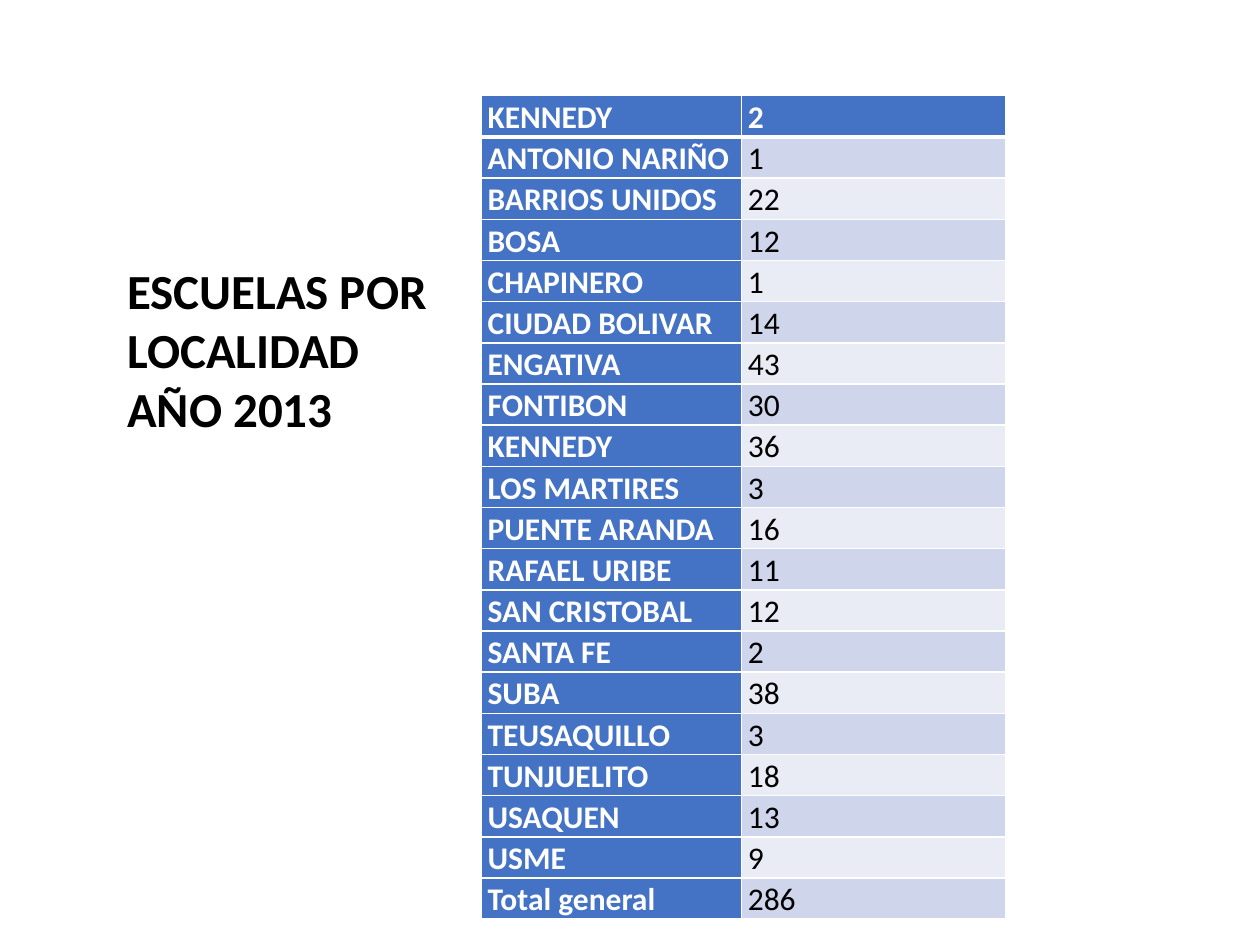
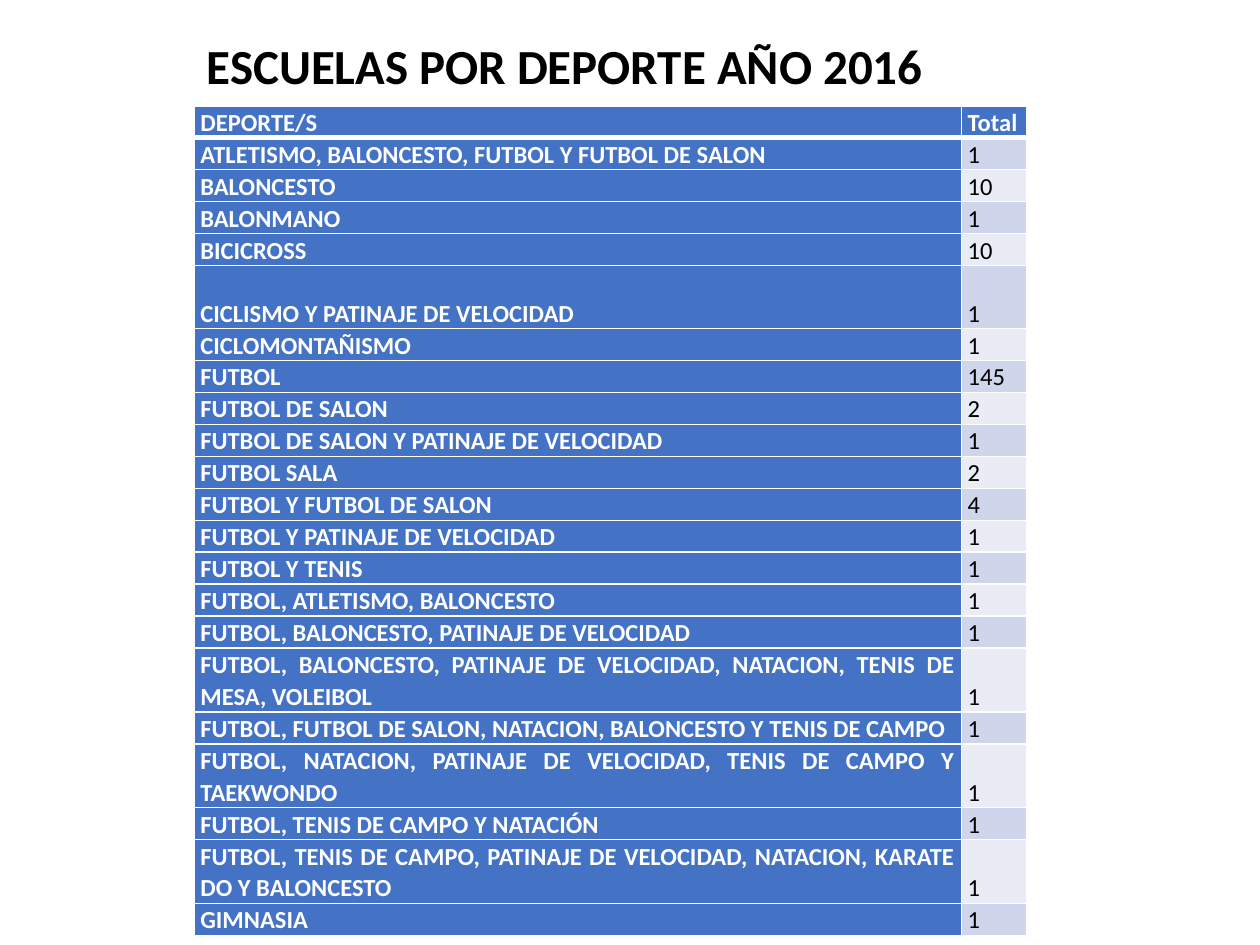
from dataclasses import dataclass
from typing import NamedTuple

from lxml.etree import SubElement
from pptx import Presentation
from pptx.dml.color import RGBColor
from pptx.enum.text import MSO_ANCHOR, MSO_AUTO_SIZE, PP_ALIGN
from pptx.oxml.ns import qn
from pptx.util import Inches, Pt

COLUMNS, ROWS = 100, 75
SLIDE_WIDTH, SLIDE_HEIGHT = Inches(10), Inches(7.5)
FONT = "Calibri"
BLACK, WHITE, BLUE = "000000", "FFFFFF", "4472C4"
BANDS = ("CFD5EA", "E9EBF5")
TITLE_SIZE = 28
RULE, HEADER_RULE = 1, 3


class Area(NamedTuple):
    """Place on the slide, in grid columns and rows."""

    left: float
    top: float
    width: float
    height: float


class Entry(NamedTuple):
    """One row of a count table and how many text lines high it is."""

    label: str
    count: str
    lines: int = 1


@dataclass(frozen=True)
class CountSlide:
    """A title and a two-column table of school counts."""

    title: str
    title_area: Area
    table_left: float
    table_top: float
    column_widths: tuple[float, float]
    line_height: float
    text_size: int
    entries: list[Entry]


SCHOOLS_BY_DISTRICT = CountSlide(
    title="ESCUELAS POR LOCALIDAD AÑO 2013",
    title_area=Area(9.1, 20.2, 27.6, 15.1),
    table_left=38.2,
    table_top=7.6,
    column_widths=(20.65, 20.95),
    line_height=3.21,
    text_size=18,
    entries=[
        Entry("KENNEDY", "2"),
        Entry("ANTONIO NARIÑO", "1"),
        Entry("BARRIOS UNIDOS", "22"),
        Entry("BOSA", "12"),
        Entry("CHAPINERO", "1"),
        Entry("CIUDAD BOLIVAR", "14"),
        Entry("ENGATIVA", "43"),
        Entry("FONTIBON", "30"),
        Entry("KENNEDY", "36"),
        Entry("LOS MARTIRES", "3"),
        Entry("PUENTE ARANDA", "16"),
        Entry("RAFAEL URIBE", "11"),
        Entry("SAN CRISTOBAL", "12"),
        Entry("SANTA FE", "2"),
        Entry("SUBA", "38"),
        Entry("TEUSAQUILLO", "3"),
        Entry("TUNJUELITO", "18"),
        Entry("USAQUEN", "13"),
        Entry("USME", "9"),
        Entry("Total general", "286"),
    ],
)

SCHOOLS_BY_SPORT = CountSlide(
    title="ESCUELAS POR DEPORTE AÑO 2016",
    title_area=Area(15.4, 2.3, 66.1, 5.7),
    table_left=15.4,
    table_top=8.4,
    column_widths=(60.9, 5.2),
    line_height=2.5,
    text_size=14,
    entries=[
        Entry("DEPORTE/S", "Total"),
        Entry("ATLETISMO, BALONCESTO, FUTBOL Y FUTBOL DE SALON", "1"),
        Entry("BALONCESTO", "10"),
        Entry("BALONMANO", "1"),
        Entry("BICICROSS", "10"),
        Entry("CICLISMO Y PATINAJE DE VELOCIDAD", "1", 2),
        Entry("CICLOMONTAÑISMO", "1"),
        Entry("FUTBOL", "145"),
        Entry("FUTBOL DE SALON", "2"),
        Entry("FUTBOL DE SALON Y PATINAJE DE VELOCIDAD", "1"),
        Entry("FUTBOL SALA", "2"),
        Entry("FUTBOL Y FUTBOL DE SALON", "4"),
        Entry("FUTBOL Y PATINAJE DE VELOCIDAD", "1"),
        Entry("FUTBOL Y TENIS", "1"),
        Entry("FUTBOL, ATLETISMO, BALONCESTO", "1"),
        Entry("FUTBOL, BALONCESTO, PATINAJE DE VELOCIDAD", "1"),
        Entry("FUTBOL, BALONCESTO, PATINAJE DE VELOCIDAD, NATACION, TENIS DE MESA, VOLEIBOL", "1", 2),
        Entry("FUTBOL, FUTBOL DE SALON, NATACION, BALONCESTO Y TENIS DE CAMPO", "1"),
        Entry("FUTBOL, NATACION, PATINAJE DE VELOCIDAD, TENIS DE CAMPO Y TAEKWONDO", "1", 2),
        Entry("FUTBOL, TENIS DE CAMPO Y NATACIÓN", "1"),
        Entry("FUTBOL, TENIS DE CAMPO, PATINAJE DE VELOCIDAD, NATACION, KARATE DO Y BALONCESTO", "1", 2),
        Entry("GIMNASIA", "1"),
    ],
)


def color(value: str) -> RGBColor:
    """Turn a hex string into a colour."""
    return RGBColor.from_string(value)


def across(columns: float) -> int:
    """Length of a number of grid columns."""
    return round(SLIDE_WIDTH * columns / COLUMNS)


def down(rows: float) -> int:
    """Length of a number of grid rows."""
    return round(SLIDE_HEIGHT * rows / ROWS)


def set_font(paragraph, size: int, ink: str, bold: bool) -> None:
    """Format a whole paragraph."""
    font = paragraph.font
    font.name, font.size, font.bold = FONT, Pt(size), bold
    font.color.rgb = color(ink)


def add_borders(cell, top: int, bottom: int) -> None:
    """Rule the four sides of a cell in white."""
    properties = cell._tc.get_or_add_tcPr()
    for side, width in (("L", RULE), ("R", RULE), ("T", top), ("B", bottom)):
        line = SubElement(properties, qn(f"a:ln{side}"), w=str(Pt(width)))
        fill = SubElement(line, qn("a:solidFill"))
        SubElement(fill, qn("a:srgbClr"), val=WHITE)


def fill_cell(cell, text: str, size: int, row: int, is_label: bool) -> None:
    """Write and colour one cell; labels and the first row are white on blue."""
    strong = is_label or row == 0
    add_borders(
        cell,
        top=HEADER_RULE if row == 1 else RULE,
        bottom=HEADER_RULE if row == 0 else RULE,
    )
    cell.fill.solid()
    cell.fill.fore_color.rgb = color(BLUE if strong else BANDS[(row - 1) % 2])
    cell.vertical_anchor = MSO_ANCHOR.BOTTOM
    cell.margin_left = cell.margin_right = Inches(0.05)
    cell.margin_top = cell.margin_bottom = 0
    cell.text = text
    paragraph = cell.text_frame.paragraphs[0]
    paragraph.alignment = PP_ALIGN.JUSTIFY
    paragraph.line_spacing = 1.07
    set_font(paragraph, size, WHITE if strong else BLACK, strong)


def add_count_table(slide, content: CountSlide) -> None:
    """Draw the table of labels and counts."""
    line_total = sum(entry.lines for entry in content.entries)
    table = slide.shapes.add_table(
        len(content.entries), 2,
        across(content.table_left), down(content.table_top),
        across(sum(content.column_widths)), down(line_total * content.line_height),
    ).table
    table.horz_banding = False
    for column, width in zip(table.columns, content.column_widths):
        column.width = across(width)
    for row, entry in enumerate(content.entries):
        table.rows[row].height = down(entry.lines * content.line_height)
        fill_cell(table.cell(row, 0), entry.label, content.text_size, row, True)
        fill_cell(table.cell(row, 1), entry.count, content.text_size, row, False)


def place_title(slide, text: str, area: Area) -> None:
    """Move and format the title placeholder."""
    title = slide.shapes.title
    title.left, title.top = across(area.left), down(area.top)
    title.width, title.height = across(area.width), down(area.height)
    frame = title.text_frame
    frame.text = text
    frame.word_wrap = True
    frame.auto_size = MSO_AUTO_SIZE.NONE
    frame.vertical_anchor = MSO_ANCHOR.TOP
    paragraph = frame.paragraphs[0]
    paragraph.alignment = PP_ALIGN.LEFT
    set_font(paragraph, TITLE_SIZE, BLACK, True)


def main() -> None:
    """Build and save the presentation."""
    presentation = Presentation()
    presentation.slide_width, presentation.slide_height = SLIDE_WIDTH, SLIDE_HEIGHT
    title_only = presentation.slide_layouts[5]
    for content in (SCHOOLS_BY_DISTRICT, SCHOOLS_BY_SPORT):
        slide = presentation.slides.add_slide(title_only)
        place_title(slide, content.title, content.title_area)
        add_count_table(slide, content)
    presentation.save("out.pptx")


if __name__ == "__main__":
    main()
